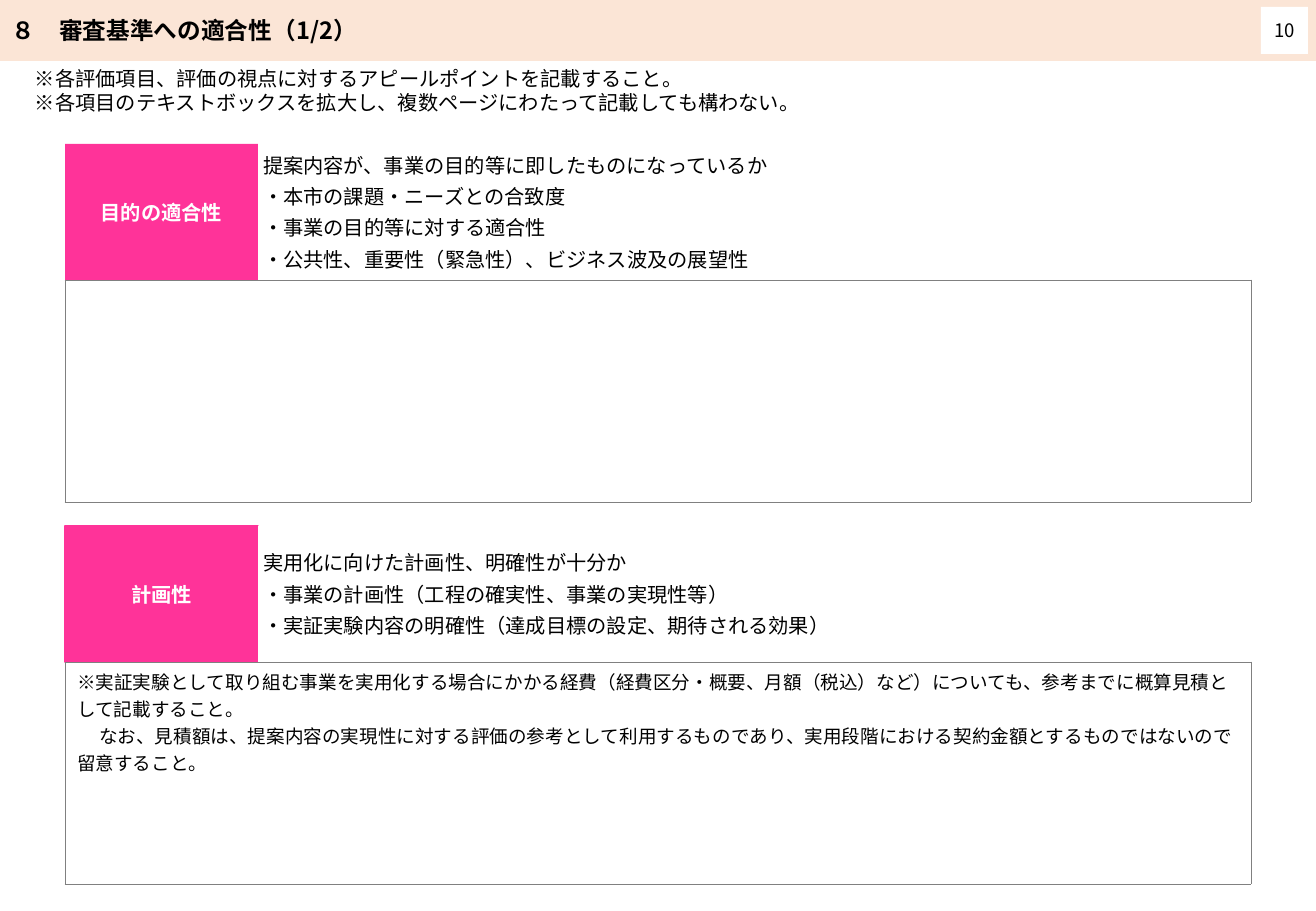
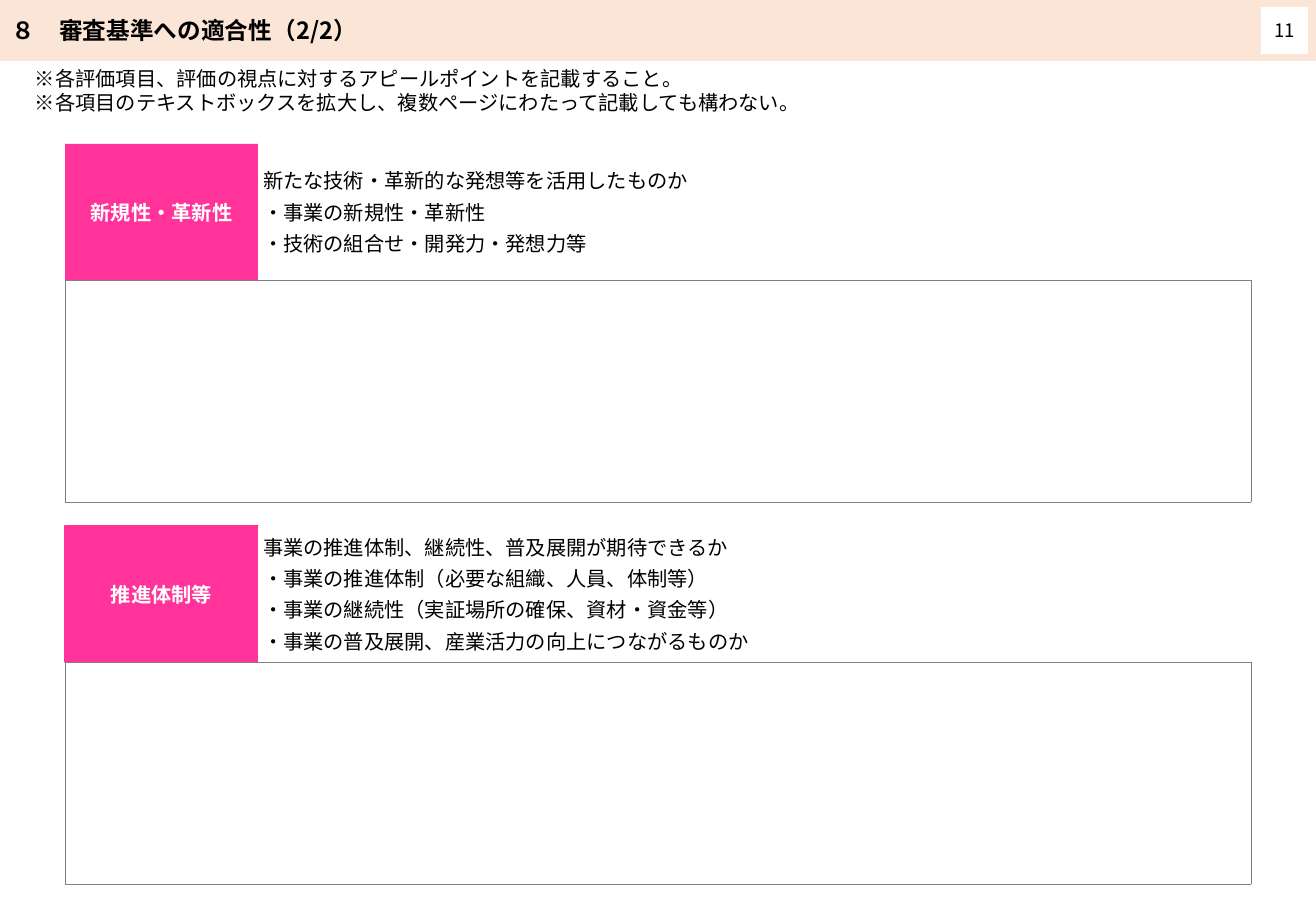
from lxml.etree import SubElement
from pptx import Presentation
from pptx.dml.color import RGBColor
from pptx.enum.shapes import MSO_SHAPE
from pptx.enum.text import MSO_ANCHOR, MSO_AUTO_SIZE, PP_ALIGN
from pptx.oxml.ns import qn
from pptx.util import Emu, Pt

SCALE = 7526
FONT = "Noto Sans CJK JP"
BLACK = RGBColor(0x00, 0x00, 0x00)
WHITE = RGBColor(0xFF, 0xFF, 0xFF)
PEACH = RGBColor(0xFB, 0xE5, 0xD6)
PINK = RGBColor(0xFF, 0x33, 0x99)
GREY = RGBColor(0x80, 0x80, 0x80)

WIDE, HIGH = 1316, 911
BAND = 60
LEFT, TOP, STEP = 65, 144, 382
LABEL, HEAD = 193, 136
FRAME, BODY = 1186, 222
TIGHT = Pt(14.5)

NOTES = [
    "※各評価項目、評価の視点に対するアピールポイントを記載すること。",
    "※各項目のテキストボックスを拡大し、複数ページにわたって記載しても構わない。",
]
COSTS = [
    "※実証実験として取り組む事業を実用化する場合にかかる経費（経費区分・概要、月額（税込）など）についても、参考までに概算見積として記載すること。",
    "なお、見積額は、提案内容の実現性に対する評価の参考として利用するものであり、実用段階における契約金額とするものではないので留意すること。",
]
PAGES = [
    ("1/2", 10, [
        ("目的の適合性", [
            "提案内容が、事業の目的等に即したものになっているか",
            "・本市の課題・ニーズとの合致度",
            "・事業の目的等に対する適合性",
            "・公共性、重要性（緊急性）、ビジネス波及の展望性",
        ], []),
        ("計画性", [
            "実用化に向けた計画性、明確性が十分か",
            "・事業の計画性（工程の確実性、事業の実現性等）",
            "・実証実験内容の明確性（達成目標の設定、期待される効果）",
        ], COSTS),
    ]),
    ("2/2", 11, [
        ("新規性・革新性", [
            "新たな技術・革新的な発想等を活用したものか",
            "・事業の新規性・革新性",
            "・技術の組合せ・開発力・発想力等",
        ], []),
        ("推進体制等", [
            "事業の推進体制、継続性、普及展開が期待できるか",
            "・事業の推進体制（必要な組織、人員、体制等）",
            "・事業の継続性（実証場所の確保、資材・資金等）",
            "・事業の普及展開、産業活力の向上につながるものか",
        ], []),
    ]),
]


def px(*nums):
    return [Emu(num * SCALE) for num in nums]


def write(frame, lines, size, color=BLACK, bold=False, align=PP_ALIGN.LEFT,
          pitch=None, after=0):
    frame.word_wrap = True
    for num, line in enumerate(lines):
        para = frame.add_paragraph() if num else frame.paragraphs[0]
        para.alignment = align
        para.space_after = Pt(after)
        if pitch:
            para.line_spacing = pitch
        run = para.add_run()
        run.text = line
        run.font.name = FONT
        run.font.size = Pt(size)
        run.font.bold = bold
        run.font.color.rgb = color
        SubElement(run.font._element, qn("a:ea"), typeface=FONT)


def box(shapes, spot, fill, edge=None):
    shape = shapes.add_shape(MSO_SHAPE.RECTANGLE, *px(*spot))
    shape.shadow.inherit = False
    shape.fill.solid()
    shape.fill.fore_color.rgb = fill
    if edge:
        shape.line.color.rgb = fill
        shape.line.width = Pt(edge)
    else:
        shape.line.fill.background()
    shape.text_frame.vertical_anchor = MSO_ANCHOR.MIDDLE
    return shape.text_frame


def inset(frame, gap):
    frame.margin_left = frame.margin_right = gap
    frame.margin_top = frame.margin_bottom = gap


def header(slide, part, page):
    band = box(slide.shapes, (0, 0, WIDE, BAND), PEACH, 1)
    write(band, [f"８　審査基準への適合性（{part}）"], 14, bold=True)
    badge = box(slide.shapes, (1261, 7, 47, 47), WHITE)
    inset(badge, 0)
    write(badge, [str(page)], 11, align=PP_ALIGN.CENTER)


def notes(slide):
    frame = slide.shapes.add_textbox(*px(23, BAND, 1271, 61)).text_frame
    write(frame, NOTES, 12, pitch=TIGHT)
    frame.auto_size = MSO_AUTO_SIZE.SHAPE_TO_FIT_TEXT


def border(cell):
    props = cell._tc.get_or_add_tcPr()
    for num, side in enumerate(("lnL", "lnR", "lnT", "lnB")):
        line = props.makeelement(qn(f"a:{side}"), {"w": str(Pt(0.5))})
        fill = SubElement(line, qn("a:solidFill"))
        SubElement(fill, qn("a:srgbClr"), val=str(GREY))
        props.insert(num, line)


def answer(slide, top, lines):
    table = slide.shapes.add_table(1, 1, *px(LEFT, top, FRAME, BODY)).table
    table.first_row = table.horz_banding = False
    cell = table.cell(0, 0)
    cell.fill.background()
    border(cell)
    write(cell.text_frame, lines, 11)
    for para in cell.text_frame.paragraphs[1:]:
        para._p.get_or_add_pPr().set("indent", str(22 * SCALE))


def topic(slide, top, name, points, lines, edge):
    shapes = slide.shapes.add_group_shape().shapes
    label = box(shapes, (LEFT, top, LABEL, HEAD), PINK, edge)
    scope = box(shapes, (LEFT + LABEL, top, FRAME - LABEL, HEAD), WHITE)
    for frame in (label, scope):
        inset(frame, px(5)[0])
    write(label, [name], 12, WHITE, True, PP_ALIGN.CENTER, TIGHT, 4)
    write(scope, points, 12, pitch=TIGHT, after=4)
    answer(slide, top + HEAD, lines)


def main():
    deck = Presentation()
    deck.slide_width, deck.slide_height = px(WIDE, HIGH)
    for part, page, topics in PAGES:
        slide = deck.slides.add_slide(deck.slide_layouts[6])
        header(slide, part, page)
        notes(slide)
        for num, (name, points, lines) in enumerate(topics):
            topic(slide, TOP + num * STEP, name, points, lines, num * 0.75)
    deck.save("out.pptx")


if __name__ == "__main__":
    main()
